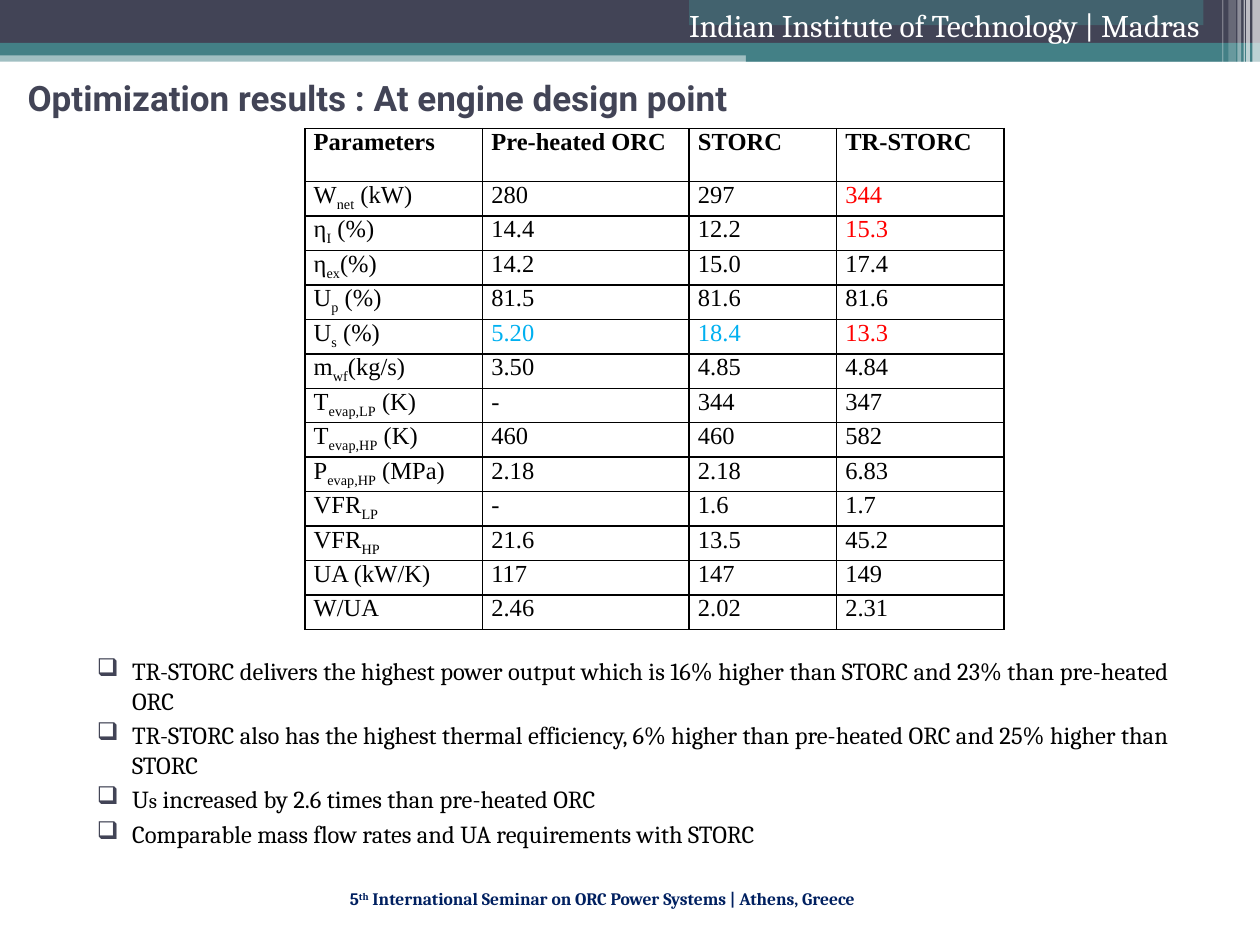
from dataclasses import dataclass, field

from lxml import etree
from pptx import Presentation, util as u
from pptx.dml.color import RGBColor
from pptx.enum import shapes, text
from pptx.oxml import ns

COLORS = {"navy": "424456", "teal": "438086", "white": "FFFFFF", "black": "000000",
          "red": "FF0000", "blue": "00B0F0", "footer": "002060"}
ALIGN = text.PP_ALIGN
ANCHOR = text.MSO_ANCHOR


@dataclass
class Bar:
    left: float
    top: float
    width: float
    height: float
    color: str
    alpha: int = 100


@dataclass
class Label:
    left: float
    top: float
    width: float
    height: float
    lines: list[str]
    style: dict
    align: ALIGN = ALIGN.LEFT
    anchor: ANCHOR = ANCHOR.TOP
    marked: dict = field(default_factory=dict)
    bullet: str = ""


BARS = [
    Bar(0, 0.4, 10, 0.09, "teal", 50),
    Bar(0, 0, 10, 0.34, "navy"),
    Bar(0, 0.34, 10, 0.1, "teal"),
    Bar(5.92, 0.39, 4.08, 0.1, "teal"),
    Bar(5.47, 0, 4.08, 0.2, "teal", 50),
    Bar(9.94, 0, 0.06, 0.68, "white", 65),
    Bar(9.89, 0, 0.03, 0.68, "white", 65),
    Bar(9.87, 0, 0.01, 0.68, "white", 60),
    Bar(9.82, 0, 0.03, 0.68, "white", 40),
    Bar(9.75, 0, 0.06, 0.64, "white", 20),
    Bar(9.7, 0, 0.01, 0.64, "white", 30),
]
LABELS = [
    Label(0.12, 0.42, 8.82, 0.7, ["Optimization results : At engine design point"],
          {"name": "Roboto", "size": 20, "color": "navy", "bold": True}, anchor=ANCHOR.MIDDLE),
    Label(4.53, 0, 5.09, 0.4, ["Indian Institute of Technology | Madras"],
          {"name": "Cambria", "size": 18, "color": "white"}, ALIGN.RIGHT, ANCHOR.BOTTOM),
    Label(0.86, 7, 6.02, 0.5,
          ["5_th_ International Seminar on ORC Power Systems | Athens, Greece"],
          {"name": "Cambria", "size": 10, "color": "footer", "bold": True}, ALIGN.RIGHT,
          marked={"baseline": 30}),
    Label(0.55, 5.16, 8.83, 1.8, [
        "TR-STORC delivers the highest power output which is 16% higher than STORC "
        "and 23% than pre-heated ORC",
        "TR-STORC also has the highest thermal efficiency, 6% higher than pre-heated ORC "
        "and 25% higher than STORC",
        "U_s_ increased by 2.6 times than pre-heated ORC",
        "Comparable mass flow rates and UA requirements with STORC",
    ], {"name": "Cambria", "size": 14, "color": "black"}, ALIGN.JUSTIFY,
        marked={"size": 12}, bullet="❑"),
]
ROWS = [
    ("Parameters", "Pre-heated ORC", "STORC", "TR-STORC"),
    ("W_net_ (kW)", "280", "297", "344"),
    ("η_I_ (%)", "14.4", "12.2", "15.3"),
    ("η_ex_(%)", "14.2", "15.0", "17.4"),
    ("U_p_ (%)", "81.5", "81.6", "81.6"),
    ("U_s_ (%)", "5.20", "18.4", "13.3"),
    ("m_wf_(kg/s)", "3.50", "4.85", "4.84"),
    ("T_evap,LP_ (K)", "-", "344", "347"),
    ("T_evap,HP_ (K)", "460", "460", "582"),
    ("P_evap,HP_ (MPa)", "2.18", "2.18", "6.83"),
    ("VFR_LP_", "-", "1.6", "1.7"),
    ("VFR_HP_", "21.6", "13.5", "45.2"),
    ("UA (kW/K)", "117", "147", "149"),
    ("W/UA", "2.46", "2.02", "2.31"),
]
HIGHLIGHTS = {(1, 3): "red", (2, 3): "red", (5, 3): "red", (5, 1): "blue", (5, 2): "blue"}
COLUMNS = [1.41, 1.64, 1.17, 1.33]
TABLE_TOP, TABLE_HEIGHT, HEADER_HEIGHT = 1.02, 3.98, 0.42


def rgb(name: str) -> RGBColor:
    """Look up a named colour."""
    return RGBColor.from_string(COLORS[name])


def sub(parent, tag: str, **attrs):
    """Append a DrawingML child element with attributes."""
    child = etree.SubElement(parent, ns.qn(tag))
    for key, value in attrs.items():
        child.set(key, str(value))
    return child


def add_runs(p, line: str, style: dict, marked: dict) -> None:
    """Write a line, giving the parts between underscores the marked style."""
    for i, part in enumerate(line.split("_")):
        if not part:
            continue
        r = p.add_run()
        r.text = part
        values = {**style, **marked} if i % 2 else dict(style)
        r.font.color.rgb = rgb(values.pop("color"))
        baseline = values.pop("baseline", 0)
        if baseline:
            r._r.get_or_add_rPr().set("baseline", str(baseline * 1000))
        values["size"] = u.Pt(values["size"])
        for key, value in values.items():
            setattr(r.font, key, value)


def add_bar(s, bar: Bar) -> None:
    """Draw one band of the header."""
    sp = s.shapes.add_shape(shapes.MSO_SHAPE.RECTANGLE, u.Inches(bar.left), u.Inches(bar.top),
                            u.Inches(bar.width), u.Inches(bar.height))
    sp.shadow.inherit = False
    sp.fill.solid()
    sp.fill.fore_color.rgb = rgb(bar.color)
    sp.line.fill.background()
    if bar.alpha < 100:
        color = sp._element.spPr.find(".//" + ns.qn("a:srgbClr"))
        sub(color, "a:alpha", val=bar.alpha * 1000)


def add_label(s, label: Label) -> None:
    """Draw one text box, bulleted if the label asks for it."""
    sp = s.shapes.add_textbox(u.Inches(label.left), u.Inches(label.top),
                              u.Inches(label.width), u.Inches(label.height))
    tf = sp.text_frame
    tf.word_wrap = True
    tf.vertical_anchor = label.anchor
    for i, line in enumerate(label.lines):
        p = tf.add_paragraph() if i else tf.paragraphs[0]
        p.alignment = label.align
        if label.bullet:
            p.space_before = u.Pt(3 if i else 0)
            pPr = p._p.get_or_add_pPr()
            pPr.set("marL", str(u.Inches(0.4)))
            pPr.set("indent", str(u.Inches(-0.28)))
            sub(sub(pPr, "a:buClr"), "a:srgbClr", val=COLORS["navy"])
            sub(pPr, "a:buChar", char=label.bullet)
        add_runs(p, line, label.style, label.marked)


def format_cell(cell, line: str, color: str, bold: bool) -> None:
    """Fill one table cell and give it thin black borders."""
    margins = {"margin_left": 0.07, "margin_right": 0.07, "margin_top": 0, "margin_bottom": 0}
    for key, value in margins.items():
        setattr(cell, key, u.Inches(value))
    tcPr = cell._tc.get_or_add_tcPr()
    for side in "LRTB":
        ln = sub(tcPr, f"a:ln{side}", w=u.Pt(1))
        sub(sub(ln, "a:solidFill"), "a:srgbClr", val=COLORS["black"])
    cell.fill.background()
    p = cell.text_frame.paragraphs[0]
    p.alignment = ALIGN.JUSTIFY
    style = {"name": "Times New Roman", "size": 14, "color": color, "bold": bold}
    add_runs(p, line, style, {"baseline": -25})


def add_results(s) -> None:
    """Draw the table of optimization results."""
    table = s.shapes.add_table(len(ROWS), len(COLUMNS), u.Inches(2.42), u.Inches(TABLE_TOP),
                               u.Inches(sum(COLUMNS)), u.Inches(TABLE_HEIGHT)).table
    table.first_row = table.horz_banding = False
    for column, width in zip(table.columns, COLUMNS):
        column.width = u.Inches(width)
    body_height = (TABLE_HEIGHT - HEADER_HEIGHT) / (len(ROWS) - 1)
    for i, row in enumerate(ROWS):
        table.rows[i].height = u.Inches(body_height if i else HEADER_HEIGHT)
        for j, line in enumerate(row):
            format_cell(table.cell(i, j), line, HIGHLIGHTS.get((i, j), "black"), i == 0)


def main() -> None:
    """Build the slide and save it."""
    prs = Presentation()
    prs.slide_width, prs.slide_height = u.Inches(10), u.Inches(7.5)
    s = prs.slides.add_slide(prs.slide_layouts[6])
    for bar in BARS:
        add_bar(s, bar)
    for label in LABELS:
        add_label(s, label)
    add_results(s)
    prs.save("out.pptx")


if __name__ == "__main__":
    main()
